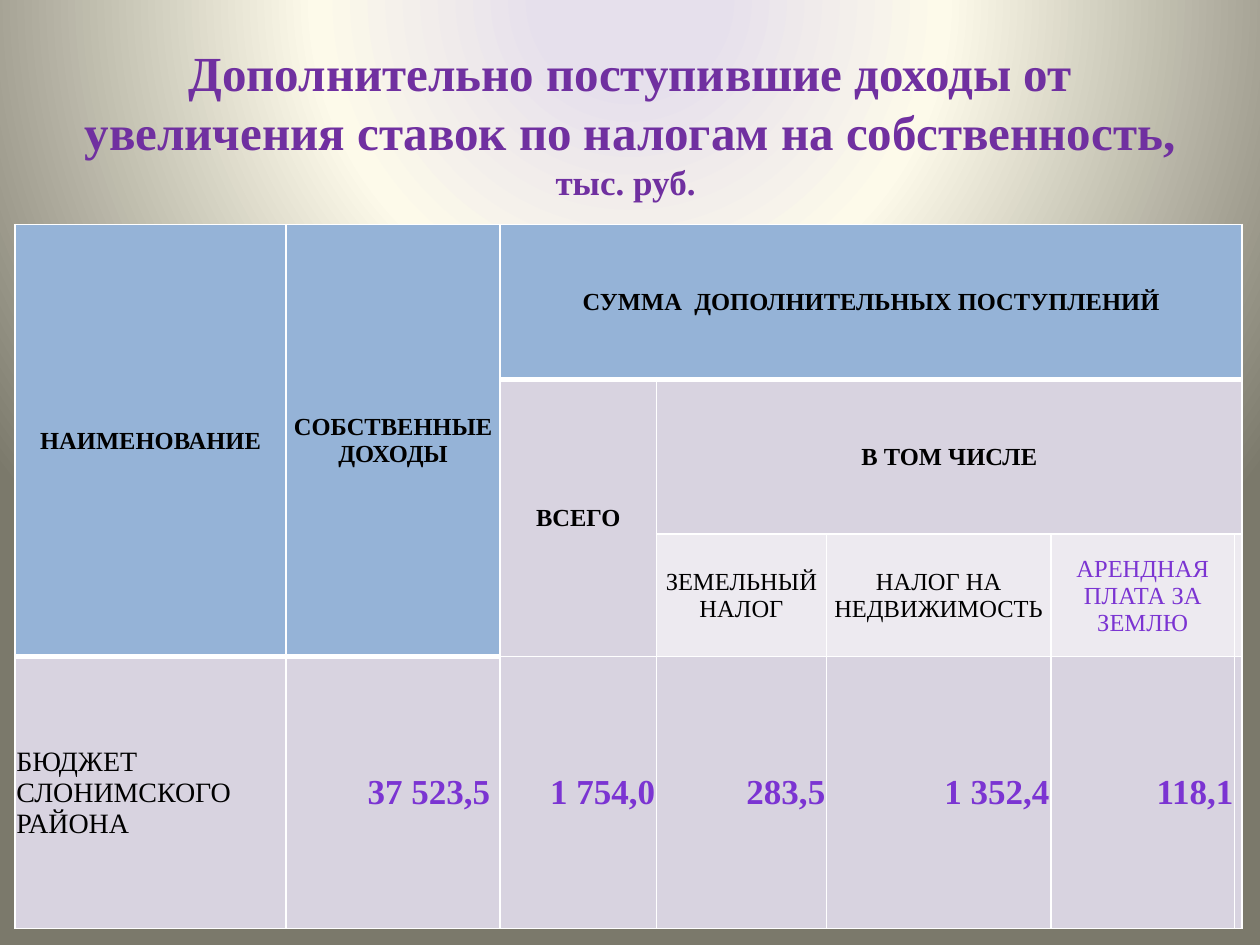
from lxml import etree
from pptx import Presentation
from pptx import util as u
from pptx.dml.color import RGBColor
from pptx.enum import text
from pptx.oxml.ns import qn

FONT = "Times New Roman"
TITLE_PURPLE = RGBColor(0x70, 0x30, 0xA0)
VALUE_PURPLE = RGBColor(0x7B, 0x34, 0xD2)
BLACK = RGBColor(0, 0, 0)
WHITE = RGBColor(0xFF, 0xFF, 0xFF)
HEADER_BLUE = RGBColor(0x95, 0xB3, 0xD7)
BAND_DARK = RGBColor(0xD8, 0xD3, 0xE0)
BAND_LIGHT = RGBColor(0xED, 0xEA, 0xF0)
GLOW = [(11, RGBColor(0xE6, 0xE0, 0xEC)), (40, RGBColor(0xFD, 0xFA, 0xEA)),
        (100, RGBColor(0x7B, 0x79, 0x6B))]

COLUMNS = [2.15, 1.7, 1.24, 1.35, 1.78, 1.46, 0.05]
ROWS = [1.23, 1.23, 0.97, 2.16]
ROW_FILLS = [HEADER_BLUE, BAND_DARK, BAND_LIGHT, BAND_DARK]
MERGES = [((0, 0), (2, 0)), ((0, 1), (2, 1)), ((0, 2), (0, 6)),
          ((1, 2), (2, 2)), ((1, 3), (1, 6))]
HEADINGS = {
    (0, 0): "НАИМЕНОВАНИЕ",
    (0, 1): "СОБСТВЕННЫЕ ДОХОДЫ",
    (0, 2): "СУММА  ДОПОЛНИТЕЛЬНЫХ ПОСТУПЛЕНИЙ",
    (1, 2): "ВСЕГО",
    (1, 3): "В ТОМ ЧИСЛЕ",
}
TAXES = ["ЗЕМЕЛЬНЫЙ НАЛОГ", "НАЛОГ НА НЕДВИЖИМОСТЬ", "АРЕНДНАЯ ПЛАТА ЗА ЗЕМЛЮ"]
BUDGET = "БЮДЖЕТ СЛОНИМСКОГО РАЙОНА"
AMOUNTS = ["37 523,5 ", "1 754,0", "283,5", "1 352,4", "118,1"]


def add_solid(parent, color):
    fill = etree.SubElement(parent, qn("a:solidFill"))
    etree.SubElement(fill, qn("a:srgbClr"), val=str(color))


def paint_background(slide):
    """Radial glow centred above the top edge of the slide."""
    slide.background.fill.gradient()
    gradient = slide.element.find(".//" + qn("a:gradFill"))
    for child in list(gradient):
        gradient.remove(child)
    stops = etree.SubElement(gradient, qn("a:gsLst"))
    for percent, color in GLOW:
        stop = etree.SubElement(stops, qn("a:gs"), pos=str(percent * 1000))
        etree.SubElement(stop, qn("a:srgbClr"), val=str(color))
    circle = etree.SubElement(gradient, qn("a:path"), {"path": "circle"})
    etree.SubElement(circle, qn("a:fillToRect"),
                     l="50000", t="-80000", r="50000", b="180000")


def place(shape, left, top, width, height):
    shape.left, shape.top = u.Inches(left), u.Inches(top)
    shape.width, shape.height = u.Inches(width), u.Inches(height)


def style_font(font, size, color, bold):
    font.name, font.size, font.bold = FONT, u.Pt(size), bold
    font.color.rgb = color


def add_title(slide, box):
    title = slide.shapes.title
    place(title, *box)
    frame = title.text_frame
    frame.vertical_anchor = text.MSO_ANCHOR.MIDDLE
    paragraph = frame.paragraphs[0]
    paragraph.alignment = text.PP_ALIGN.CENTER
    for words, size in [
        ("Дополнительно поступившие доходы от увеличения ставок "
         "по налогам на собственность, ", 28),
        ("тыс. руб. ", 20),
    ]:
        run = paragraph.add_run()
        run.text = words
        style_font(run.font, size, TITLE_PURPLE, True)


def add_borders(cell, top, bottom):
    properties = cell._tc.get_or_add_tcPr()
    sides = [("L", 1), ("R", 1), ("T", top), ("B", bottom)]
    for index, (side, width) in enumerate(sides):
        line = etree.Element(qn("a:ln" + side), w=str(u.Pt(width)))
        add_solid(line, WHITE)
        properties.insert(index, line)


def format_cell(cell, row, column):
    cell.margin_left = cell.margin_right = cell.margin_top = u.Inches(0.01)
    cell.margin_bottom = 0
    cell.vertical_anchor = text.MSO_ANCHOR.MIDDLE
    in_header = row == 0 or (column < 2 and row < 3)
    cell.fill.solid()
    cell.fill.fore_color.rgb = HEADER_BLUE if in_header else ROW_FILLS[row]
    heavy_bottom = 2 if column < 2 else 0
    add_borders(cell, top=3 if row == heavy_bottom + 1 else 1,
                bottom=3 if row == heavy_bottom else 1)


def write(cell, words, size, color=BLACK, bold=False,
          align=text.PP_ALIGN.CENTER):
    cell.text = words
    paragraph = cell.text_frame.paragraphs[0]
    paragraph.alignment = align
    style_font(paragraph.font, size, color, bold)


def add_income_table(slide, left, top):
    table = slide.shapes.add_table(
        len(ROWS), len(COLUMNS), u.Inches(left), u.Inches(top),
        u.Inches(sum(COLUMNS)), u.Inches(sum(ROWS))).table
    for column, width in zip(table.columns, COLUMNS):
        column.width = u.Inches(width)
    for row, height in zip(table.rows, ROWS):
        row.height = u.Inches(height)
    for row in range(len(ROWS)):
        for column in range(len(COLUMNS)):
            format_cell(table.cell(row, column), row, column)
    for first, last in MERGES:
        table.cell(*first).merge(table.cell(*last))

    for position, words in HEADINGS.items():
        write(table.cell(*position), words, 14, bold=True)
    for column, (words, color) in enumerate(
            zip(TAXES, [BLACK, BLACK, VALUE_PURPLE]), start=3):
        write(table.cell(2, column), words, 14, color)
    write(table.cell(3, 0), BUDGET, 16, align=text.PP_ALIGN.LEFT)
    for column, amount in enumerate(AMOUNTS, start=1):
        write(table.cell(3, column), amount, 20, VALUE_PURPLE, True,
              text.PP_ALIGN.RIGHT)


def main():
    deck = Presentation()
    deck.slide_width, deck.slide_height = u.Inches(10), u.Inches(7.5)
    slide = deck.slides.add_slide(deck.slide_layouts[5])
    paint_background(slide)
    add_title(slide, (0.5, 0.23, 9, 1.48))
    add_income_table(slide, 0.12, 1.78)
    deck.save("out.pptx")


if __name__ == "__main__":
    main()
